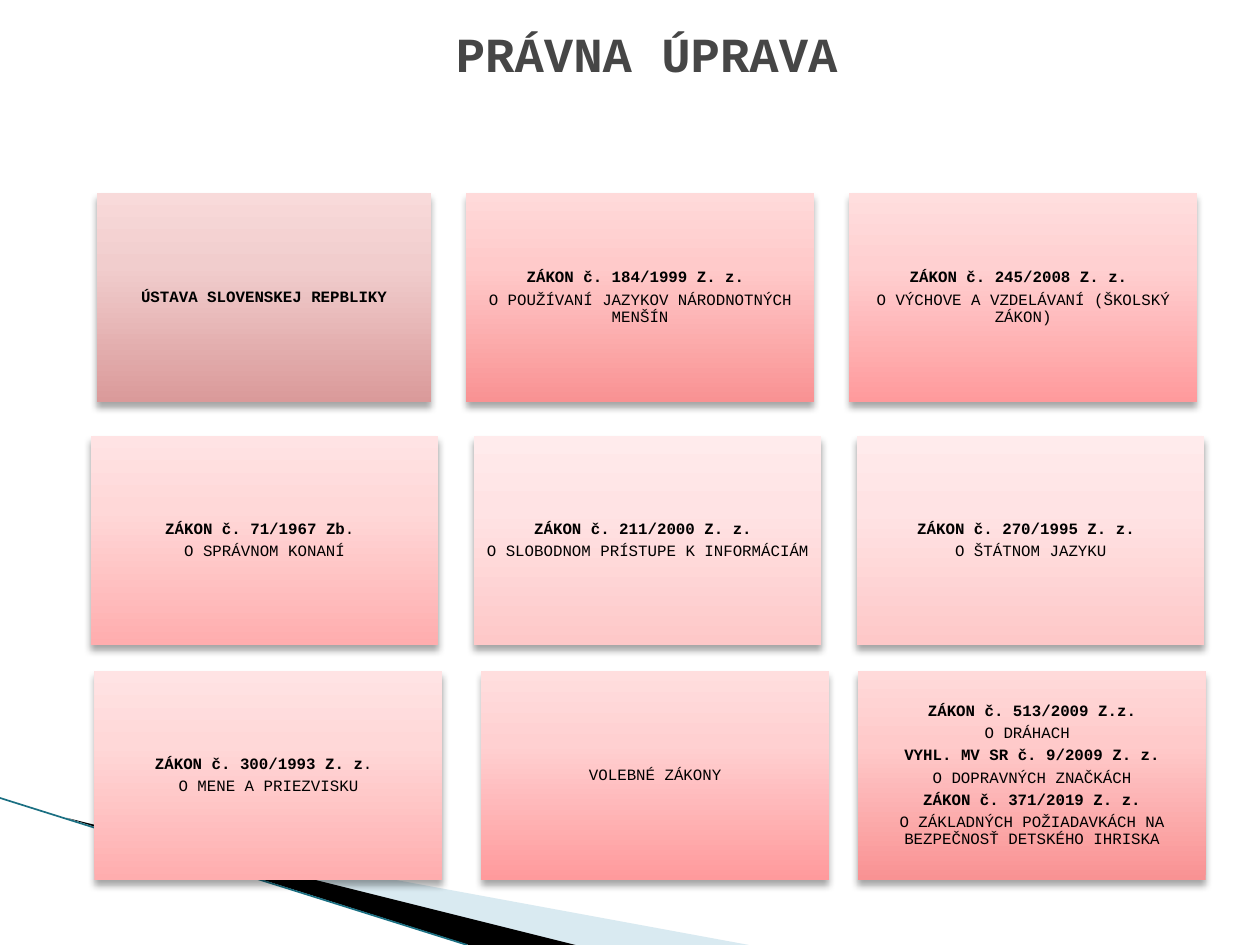
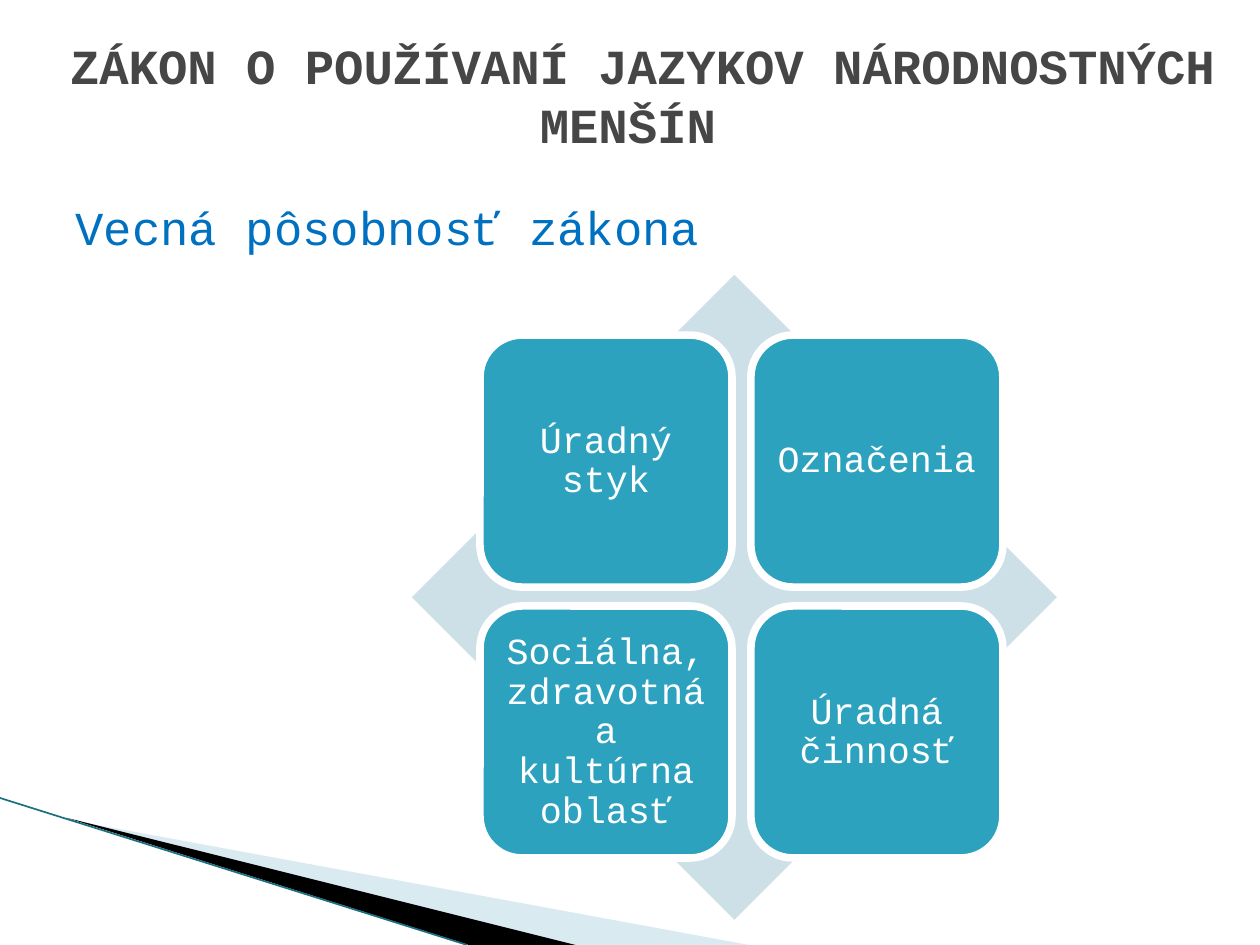
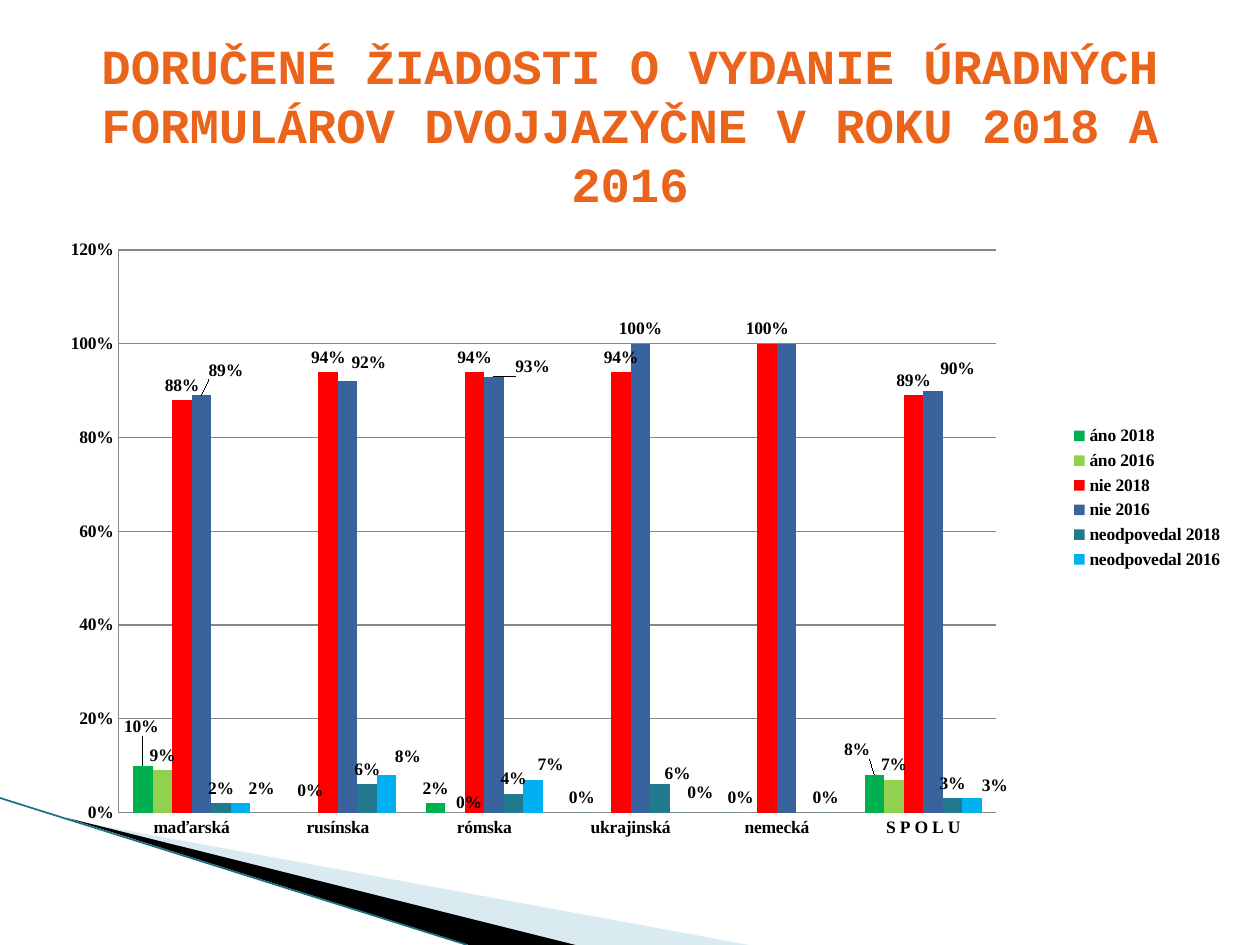
from copy import deepcopy

from lxml.etree import SubElement
from pptx import Presentation
from pptx.chart.data import CategoryChartData
from pptx.dml.color import RGBColor
from pptx.enum.chart import XL_CHART_TYPE, XL_LEGEND_POSITION, XL_TICK_MARK
from pptx.enum.shapes import MSO_CONNECTOR, MSO_SHAPE
from pptx.enum.text import MSO_ANCHOR, MSO_AUTO_SIZE, PP_ALIGN
from pptx.oxml import parse_xml
from pptx.oxml.ns import nsdecls, qn
from pptx.util import Pt

# Shared look
FONT = "Courier New"
CHART_FONT = "Times New Roman"
BLACK = RGBColor(0x00, 0x00, 0x00)
WHITE = RGBColor(0xFF, 0xFF, 0xFF)
GREY = RGBColor(0x46, 0x46, 0x46)
ORANGE = RGBColor(0xEB, 0x64, 0x1B)
BLUE = RGBColor(0x00, 0x70, 0xC0)
TEAL = RGBColor(0x2D, 0xA2, 0xBF)
PALE_TEAL = RGBColor(0xCD, 0xE0, 0xE8)
BAND_BLUE = RGBColor(0xA0, 0xCB, 0xDC)
BAND_EDGE = RGBColor(0x1A, 0x6F, 0x82)
GRID_GREY = RGBColor(0x87, 0x87, 0x87)

# Card gradients, from the bottom edge up
STOPS = (0, 0.65, 1)
GRADIENTS = {
    "dusky": ("DA9A9A", "F1CDCD", "F8DADA"),
    "strong": ("F99293", "FFCACA", "FFDADA"),
    "medium": ("FF9A9C", "FFD0D1", "FFDEDE"),
    "light": ("FFADAE", "FFD8D8", "FFE3E4"),
    "pale": ("FEC8C8", "FFE3E4", "FFEBEC"),
}

# Slide 1: each paragraph is (bold part, plain part)
LAWS_TITLE = "PRÁVNA ÚPRAVA "
CARD_WIDTH, CARD_HEIGHT = 198.7, 119.5
LAW_ROWS = [
    (110.2, [
        (55.4, 190.8, "dusky", [("ÚSTAVA SLOVENSKEJ REPBLIKY", "")]),
        (266.4, CARD_WIDTH, "strong", [
            ("ZÁKON č. 184/1999 Z. z. ", ""),
            ("", "O POUŽÍVANÍ JAZYKOV NÁRODNOTNÝCH MENŠÍN")]),
        (485.3, CARD_WIDTH, "medium", [
            ("ZÁKON č. 245/2008 Z. z. ", ""),
            ("", "O VÝCHOVE A VZDELÁVANÍ (ŠKOLSKÝ ZÁKON)")]),
    ]),
    (249.1, [
        (51.8, CARD_WIDTH, "light", [
            ("ZÁKON č. 71/1967 Zb", ". "), ("", "O SPRÁVNOM KONANÍ")]),
        (270.7, CARD_WIDTH, "pale", [
            ("ZÁKON č. 211/2000 Z. z. ", ""),
            ("", "O SLOBODNOM PRÍSTUPE K INFORMÁCIÁM")]),
        (489.6, CARD_WIDTH, "pale", [
            ("ZÁKON č. 270/1995 Z. z. ", ""), ("", "O ŠTÁTNOM JAZYKU")]),
    ]),
    (383.4, [
        (54, CARD_WIDTH, "light", [
            ("ZÁKON č. 300/1993 Z. z", ". "), ("", "O MENE A PRIEZVISKU")]),
        (275, CARD_WIDTH, "medium", [("", "VOLEBNÉ ZÁKONY")]),
        (490.3, CARD_WIDTH, "strong", [
            ("ZÁKON č. 513/2009 Z.z.", ""), ("", "O DRÁHACH "),
            ("VYHL. MV SR č. 9/2009 Z. z.", ""),
            ("", "O DOPRAVNÝCH ZNAČKÁCH"),
            ("ZÁKON č. 371/2019 Z. z.", ""),
            ("", "O ZÁKLADNÝCH POŽIADAVKÁCH NA BEZPEČNOSŤ DETSKÉHO IHRISKA")]),
    ]),
]

# Slide 2
SCOPE_TITLE = "ZÁKON O POUŽÍVANÍ JAZYKOV NÁRODNOSTNÝCH MENŠÍN "
SCOPE_HEADING = "Vecná pôsobnosť zákona"
SCOPE_AREAS = ["Úradný styk", "Označenia",
               "Sociálna, zdravotná a kultúrna oblasť", "Úradná činnosť"]
TILE_LEFT, TILE_TOP, TILE_SIZE, TILE_STEP = 274.3, 191.5, 144, 154.8

# Slide 3: name, colour, values, label shifts in points, hidden labels
REQUESTS_TITLE = ("DORUČENÉ ŽIADOSTI O VYDANIE ÚRADNÝCH FORMULÁROV "
                  "DVOJJAZYČNE V ROKU 2018 A 2016")
MINORITIES = ["maďarská", "rusínska", "rómska", "ukrajinská", "nemecká",
              "S P O L U"]
ANSWERS = [
    ("áno 2018", "00B050", (0.1, 0, 0.02, 0, 0, 0.08),
     {0: (-1, -14), 1: (12, -4), 4: (7, 0), 5: (-10, -6)}, ()),
    ("áno 2016", "92D050", (0.09, 0, 0, 0, 0, 0.07), {2: (8, 3)}, (1, 3, 4)),
    ("nie 2018", "FF0000", (0.88, 0.94, 0.94, 0.94, 1, 0.89), {}, ()),
    ("nie 2016", "39639D", (0.89, 0.92, 0.93, 1, 1, 0.9),
     {0: (14, -6), 1: (12, -2), 2: (22, 3), 5: (14, -4)}, (4,)),
    ("neodpovedal 2018", "227A8F", (0.02, 0.06, 0.04, 0.06, 0, 0.03),
     {3: (10, 2), 4: (11, 0)}, ()),
    ("neodpovedal 2016", "00B0F0", (0.02, 0.08, 0.07, 0, 0, 0.03),
     {0: (12, 0), 1: (12, -2), 2: (10, 0), 3: (12, -3), 5: (13, 1)}, (4,)),
]
CHART_AREA = (14.4, 60.5, 692, 447.8)
PLOT_AREA = {"x": 0.077, "y": 0.184, "w": 0.725, "h": 0.718}


def place(shape, left, top, width, height):
    shape.left, shape.top = Pt(left), Pt(top)
    shape.width, shape.height = Pt(width), Pt(height)


def style(paragraph, size, color, bold=False):
    font = paragraph.font
    font.name, font.size, font.bold = FONT, Pt(size), bold
    font.color.rgb = color


def add_band(page):
    """Draw the slanted band in the lower left corner."""
    for points, color in (
            (((39.6, 468.5), (428, 540), (328, 540)), BAND_BLUE),
            (((38, 467.3), (329, 540), (268, 540)), BLACK)):
        corners = [(Pt(x), Pt(y)) for x, y in points]
        builder = page.shapes.build_freeform(*corners[0])
        builder.add_line_segments(corners[1:], close=True)
        wedge = builder.convert_to_shape()
        wedge.shadow.inherit = False
        wedge.fill.solid()
        wedge.fill.fore_color.rgb = color
        wedge.line.fill.background()
        if color == BAND_BLUE:
            tint = wedge._element.spPr.find(".//" + qn("a:srgbClr"))
            SubElement(tint, qn("a:alpha"), val="40000")
    edge = page.shapes.add_connector(
        MSO_CONNECTOR.STRAIGHT, Pt(0), Pt(456), Pt(267), Pt(540))
    edge.line.color.rgb = BAND_EDGE
    edge.line.width = Pt(0.95)
    SubElement(edge._element.spPr, qn("a:effectLst"))


def add_page(deck, layout, title, area, color=GREY):
    page = deck.slides.add_slide(deck.slide_layouts[layout])
    place(page.shapes.title, *area)
    frame = page.shapes.title.text_frame
    frame.text = title
    frame.auto_size = MSO_AUTO_SIZE.NONE
    frame.vertical_anchor = MSO_ANCHOR.MIDDLE
    frame.paragraphs[0].alignment = PP_ALIGN.CENTER
    style(frame.paragraphs[0], 28, color, bold=True)
    add_band(page)
    return page


def add_box(page, kind, area, margin):
    box = page.shapes.add_shape(kind, *map(Pt, area))
    box.shadow.inherit = False
    box.line.fill.background()
    frame = box.text_frame
    frame.word_wrap = True
    frame.vertical_anchor = MSO_ANCHOR.MIDDLE
    frame.margin_left = frame.margin_right = Pt(margin)
    frame.margin_top = frame.margin_bottom = Pt(margin)
    return box


def center(paragraph, size, color):
    paragraph.alignment = PP_ALIGN.CENTER
    paragraph.line_spacing = 0.9
    style(paragraph, size, color)


def add_card(page, area, gradient, lines):
    card = add_box(page, MSO_SHAPE.RECTANGLE, area, 3)
    properties = card._element.spPr

    # Three-stop gradient
    card.fill.gradient()
    card.fill.gradient_angle = 90
    stop_list = properties.find(".//" + qn("a:gsLst"))
    stop_list.append(deepcopy(stop_list[0]))
    for stop, position, color in zip(card.fill.gradient_stops, STOPS,
                                     GRADIENTS[gradient]):
        stop.position = position
        stop.color.rgb = RGBColor.from_string(color)

    # Soft shadow below
    shadow = SubElement(
        properties.find(qn("a:effectLst")), qn("a:outerShdw"),
        blurRad=str(Pt(4)), dist=str(Pt(3)), dir="5400000", rotWithShape="0")
    tint = SubElement(shadow, qn("a:srgbClr"), val=str(BLACK))
    SubElement(tint, qn("a:alpha"), val="35000")

    frame = card.text_frame
    for number, parts in enumerate(lines):
        para = frame.add_paragraph() if number else frame.paragraphs[0]
        center(para, 9, BLACK)
        para.space_after = Pt(3)
        for text, bold in zip(parts, (True, False)):
            if text:
                span = para.add_run()
                span.text = text
                span.font.bold = bold


def build_laws(deck):
    page = add_page(deck, 5, LAWS_TITLE, (36, 0, 684, 60.5))
    for top, cards in LAW_ROWS:
        for left, width, gradient, lines in cards:
            add_card(page, (left, top, width, CARD_HEIGHT), gradient, lines)


def build_scope(deck):
    page = add_page(deck, 1, SCOPE_TITLE, (14.4, 20.9, 705.6, 66.2))
    body = page.placeholders[1]
    place(body, 36, 105.8, 648, 396.7)
    frame = body.text_frame
    frame.text = SCOPE_HEADING
    frame.auto_size = MSO_AUTO_SIZE.NONE
    frame.margin_top = Pt(7.6)
    heading = frame.paragraphs[0]
    settings = heading._element.get_or_add_pPr()
    settings.set("marL", "0")
    settings.set("indent", "0")
    SubElement(settings, qn("a:buNone"))
    heading.space_before = Pt(0)
    style(heading, 27, BLUE)

    # Diamond with a two by two grid of tiles
    diamond = add_box(page, MSO_SHAPE.DIAMOND, (235.4, 157, 368.6, 368.6), 0)
    diamond.fill.solid()
    diamond.fill.fore_color.rgb = PALE_TEAL
    for number, area_name in enumerate(SCOPE_AREAS):
        row, column = divmod(number, 2)
        tile = add_box(page, MSO_SHAPE.ROUNDED_RECTANGLE,
                       (TILE_LEFT + column * TILE_STEP,
                        TILE_TOP + row * TILE_STEP, TILE_SIZE, TILE_SIZE), 6.5)
        tile.fill.solid()
        tile.fill.fore_color.rgb = TEAL
        tile.line.color.rgb = WHITE
        tile.line.width = Pt(4.33)
        tile.text_frame.text = area_name
        center(tile.text_frame.paragraphs[0], 21, WHITE)


def manual_layout(values, inner=False):
    target = '<c:layoutTarget val="inner"/>' if inner else ""
    modes = ('<c:xMode val="edge"/><c:yMode val="edge"/>' if inner else "")
    numbers = "".join(f'<c:{key} val="{value:.4f}"/>'
                      for key, value in values.items())
    return (f'<c:layout {nsdecls("c")}><c:manualLayout>{target}{modes}'
            f'{numbers}</c:manualLayout></c:layout>')


def adjust_labels(labels, shifts, hidden):
    """Shift or hide single data labels of one series."""
    for place_in_list, index in enumerate(sorted([*shifts, *hidden])):
        if index in hidden:
            content = '<c:delete val="1"/>'
        else:
            across, down = shifts[index]
            content = manual_layout({"x": across / CHART_AREA[2],
                                     "y": down / CHART_AREA[3]})
            content += '<c:dLblPos val="outEnd"/>'
            content += "".join(
                f'<c:show{item} val="{int(item == "Val")}"/>'
                for item in ("LegendKey", "Val", "CatName", "SerName",
                             "Percent", "BubbleSize"))
        labels._element.insert(place_in_list, parse_xml(
            f'<c:dLbl {nsdecls("c")}><c:idx val="{index}"/>{content}</c:dLbl>'))


def build_requests(deck):
    page = add_page(deck, 5, REQUESTS_TITLE, (36, 21.6, 648, 129.6), ORANGE)
    page.shapes.title.text_frame.margin_bottom = Pt(35)

    data = CategoryChartData(number_format="0%")
    data.categories = MINORITIES
    for name, _, values, _, _ in ANSWERS:
        data.add_series(name, values)
    chart = page.shapes.add_chart(XL_CHART_TYPE.COLUMN_CLUSTERED,
                                  *map(Pt, CHART_AREA), data).chart
    chart.has_title = False
    chart.font.name, chart.font.size = CHART_FONT, Pt(10)
    chart.font.bold = True
    chart.font.color.rgb = BLACK
    chart.has_legend = True
    chart.legend.position = XL_LEGEND_POSITION.RIGHT
    chart.legend.include_in_layout = False

    # Plot position
    plot_area = chart._chartSpace.find(".//" + qn("c:plotArea"))
    for layout in plot_area.findall(qn("c:layout")):
        plot_area.remove(layout)
    plot_area.insert(0, parse_xml(manual_layout(PLOT_AREA, inner=True)))

    # Axes
    scale = chart.value_axis
    scale.minimum_scale, scale.maximum_scale, scale.major_unit = 0, 1.2, 0.2
    scale.tick_labels.number_format = "0%"
    scale.tick_labels.number_format_is_linked = False
    scale.has_major_gridlines = True
    for line in (scale.format.line, scale.major_gridlines.format.line,
                 chart.category_axis.format.line):
        line.color.rgb = GRID_GREY
        line.width = Pt(0.75)
    for axis in (scale, chart.category_axis):
        axis.major_tick_mark = axis.minor_tick_mark = XL_TICK_MARK.NONE

    # Columns and their labels
    plot = chart.plots[0]
    plot.gap_width, plot.overlap = 150, 0
    plot.vary_by_categories = False
    for series, (_, color, _, shifts, hidden) in zip(plot.series, ANSWERS):
        series.invert_if_negative = False
        series.format.fill.solid()
        series.format.fill.fore_color.rgb = RGBColor.from_string(color)
        labels = series.data_labels
        labels.show_value = True
        labels.number_format = "0%"
        labels.number_format_is_linked = False
        adjust_labels(labels, shifts, hidden)


def main():
    deck = Presentation()
    deck.slide_width, deck.slide_height = Pt(720), Pt(540)
    build_laws(deck)
    build_scope(deck)
    build_requests(deck)
    deck.save("out.pptx")


if __name__ == "__main__":
    main()
